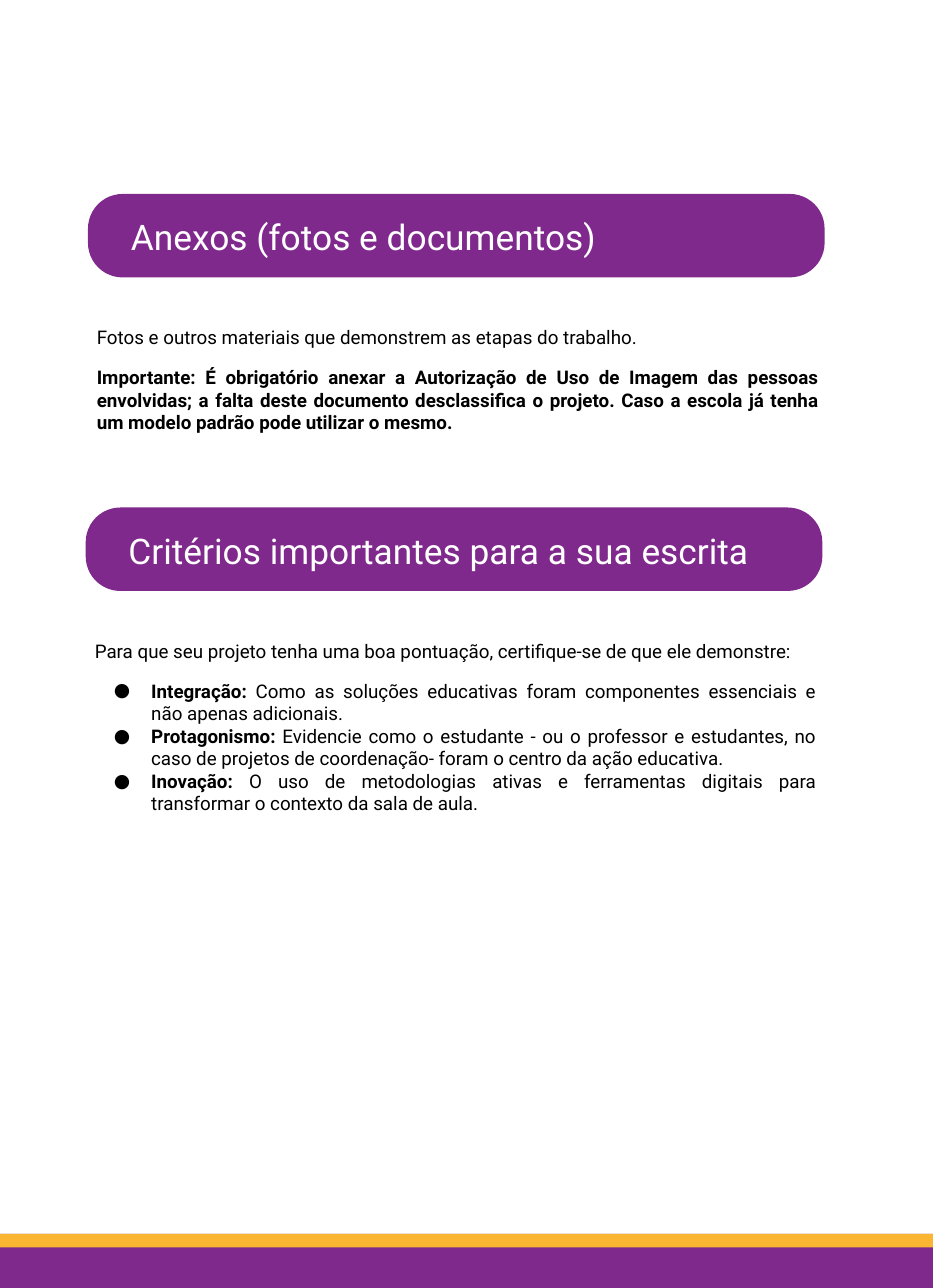
from pptx import Presentation
from pptx.dml.color import RGBColor
from pptx.enum.shapes import MSO_SHAPE as Shape
from pptx.enum.text import MSO_ANCHOR as Anchor, MSO_AUTO_SIZE as AutoSize, PP_ALIGN as Align
from pptx.oxml.ns import qn
from pptx.util import Pt
from lxml.etree import SubElement

COLORS = {"purple": "80298D", "orange": "FAB633", "white": "FFFFFF", "black": "000000"}
BULLET_INDENT = (36, -23.76)

prs = Presentation()
prs.slide_width, prs.slide_height = Pt(595.44), Pt(822.24)
slide = prs.slides.add_slide(prs.slide_layouts[1])
shapes = slide.shapes


def add_block(kind, left, top, width, height, color):
    block = shapes.add_shape(kind, Pt(left), Pt(top), Pt(width), Pt(height))
    block.shadow.inherit = False
    block.fill.solid()
    block.fill.fore_color.rgb = RGBColor.from_string(COLORS[color])
    block.line.fill.background()
    return block


def fill_text(box, place, paragraphs, size, color, align):
    """Each paragraph is (bold part, plain part, space before, has bullet)."""
    box.left, box.top, box.width, box.height = [Pt(value) for value in place]
    shapes.element.append(box.element)  # bring in front of the bars
    frame = box.text_frame
    frame.word_wrap = True
    frame.auto_size = AutoSize.NONE
    frame.vertical_anchor = Anchor.TOP
    frame.margin_left = frame.margin_right = Pt(7.2)
    frame.margin_top = frame.margin_bottom = Pt(7.2)
    for index, (strong, plain, before, bullet) in enumerate(paragraphs):
        par = frame.add_paragraph() if index else frame.paragraphs[0]
        for words, bold in ((strong, True), (plain, False)):
            if words:
                run = par.add_run()
                run.text = words
                run.font.bold = bold
        par.alignment = align
        par.space_before = Pt(before)
        props = par._p.get_or_add_pPr()
        margin, indent = BULLET_INDENT if bullet else (0, 0)
        props.set("marL", str(Pt(margin)))
        props.set("indent", str(Pt(indent)))
        if bullet:
            tint = SubElement(props, qn("a:buClr"))
            SubElement(tint, qn("a:srgbClr"), val=COLORS["black"])
            SubElement(props, qn("a:buFont"), typeface="Roboto")
            SubElement(props, qn("a:buChar"), char="●")
        else:
            SubElement(props, qn("a:buNone"))
        par.font.name = "Roboto"
        par.font.size = Pt(size)
        par.font.color.rgb = RGBColor.from_string(COLORS[color])


# Footer stripes
for stripe_height, stripe_color in ((36, "purple"), (8.64, "orange")):
    add_block(Shape.RECTANGLE, -2.88, 787.68, 599.76, stripe_height, stripe_color)

# Sections: bar position, heading, text height, paragraphs
annexes = [
    ("", "Fotos e outros materiais que demonstrem as etapas do trabalho.", 0, False),
    ("Importante: É obrigatório anexar a Autorização de Uso de Imagem das pessoas "
     "envolvidas; a falta deste documento desclassifica o projeto. Caso a escola já tenha "
     "um modelo padrão pode utilizar o mesmo.", "", 11, False),
]
criteria = [
    ("", "Para que seu projeto tenha uma boa pontuação, certifique-se de que ele demonstre:",
     0, False),
    ("Integração: ", "Como as soluções educativas foram componentes essenciais e não apenas "
     "adicionais.", 11, True),
    ("Protagonismo:", " Evidencie como o estudante - ou o professor e estudantes, no caso de "
     "projetos de coordenação- foram o centro da ação educativa.", 0, True),
    ("Inovação:", " O uso de metodologias ativas e ferramentas digitais para transformar o "
     "contexto da sala de aula.", 0, True),
]
annexes_text = shapes.add_textbox(0, 0, 0, 0)
criteria_heading = shapes.add_textbox(0, 0, 0, 0)
sections = [
    (56.16, 123.84, shapes.title, "Anexos (fotos e documentos)",
     annexes_text, 135.36, annexes),
    (54.72, 324, criteria_heading, "Critérios importantes para a sua escrita",
     slide.placeholders[1], 153.36, criteria),
]
for left, top, heading_box, heading, text_box, text_height, paragraphs in sections:
    bar = add_block(Shape.ROUNDED_RECTANGLE, left, top, 470.16, 53.28, "purple")
    bar.adjustments[0] = 0.415
    fill_text(heading_box, (left + 20.16, top + 6.48, 454.32, 41.76),
              [("", heading, 0, False)], 22.5, "white", Align.LEFT)
    fill_text(text_box, (left - 1.44, top + 77.04, 475.2, text_height),
              paragraphs, 12, "black", Align.JUSTIFY)

prs.save("out.pptx")
